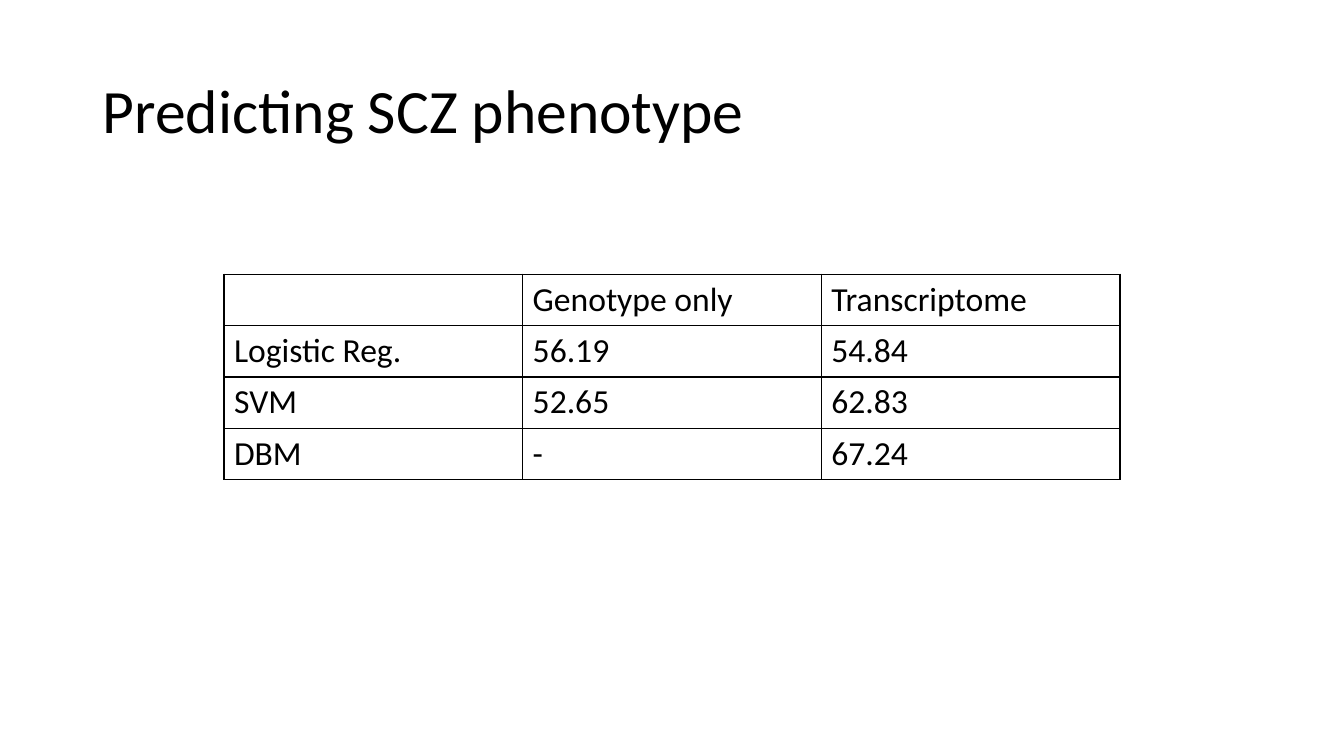
from lxml import etree
from pptx import Presentation
from pptx import util as u
from pptx.dml.color import RGBColor
from pptx.enum import text
from pptx.oxml import ns

COLOURS = {"ink": "000000", "border": "000000"}
SLIDE_WIDTH, SLIDE_HEIGHT = u.Inches(13.33), u.Inches(7.5)
SCORES = [
    ["", "Genotype only", "Transcriptome"],
    ["Logistic Reg.", "56.19", "54.84"],
    ["SVM", "52.65", "62.83"],
    ["DBM", "-", "67.24"],
]


def write(frame, words, size, anchor=None, spacing=None):
    """Put left-aligned text in a frame with its size, anchor and line spacing."""
    frame.text = words
    paragraph = frame.paragraphs[0]
    paragraph.alignment = text.PP_ALIGN.LEFT
    paragraph.line_spacing = spacing
    paragraph.font.size = u.Pt(size)
    if anchor is not None:
        frame.vertical_anchor = anchor
    for run in paragraph.runs:
        run.font.name = "Calibri"
        run.font.size = u.Pt(size)
        run.font.bold = False
        run.font.color.rgb = RGBColor.from_string(COLOURS["ink"])


def outline(cell, width=1):
    """Draw a solid border on the four sides of a cell."""
    properties = cell._tc.get_or_add_tcPr()
    for position, side in enumerate(("lnL", "lnR", "lnT", "lnB")):
        line = etree.Element(ns.qn(f"a:{side}"), w=str(u.Pt(width)))
        fill = etree.SubElement(line, ns.qn("a:solidFill"))
        etree.SubElement(fill, ns.qn("a:srgbClr"), val=COLOURS["border"])
        properties.insert(position, line)


def add_title(slide, words):
    """Place and format the slide title."""
    title = slide.shapes.title
    title.left, title.top = u.Inches(0.92), u.Inches(0.4)
    title.width, title.height = u.Inches(11.5), u.Inches(1.45)
    write(title.text_frame, words, 44, anchor=text.MSO_ANCHOR.MIDDLE, spacing=0.9)
    title.text_frame.auto_size = text.MSO_AUTO_SIZE.NONE


def add_scores(slide, scores):
    """Add a centred, ruled table two thirds of the slide wide."""
    width = SLIDE_WIDTH * 2 // 3
    row_height = u.Inches(0.51)
    table = slide.shapes.add_table(
        len(scores), len(scores[0]), (SLIDE_WIDTH - width) // 2,
        u.Inches(2.72), width, row_height * len(scores)).table
    table.first_row = table.horz_banding = False
    for row, values in enumerate(scores):
        for column, value in enumerate(values):
            cell = table.cell(row, column)
            write(cell.text_frame, value, 24)
            cell.fill.background()
            outline(cell)


def main():
    """Build and save the slide."""
    deck = Presentation()
    deck.slide_width, deck.slide_height = SLIDE_WIDTH, SLIDE_HEIGHT
    slide = deck.slides.add_slide(deck.slide_layouts[5])
    add_title(slide, "Predicting SCZ phenotype")
    add_scores(slide, SCORES)
    deck.save("out.pptx")


if __name__ == "__main__":
    main()
